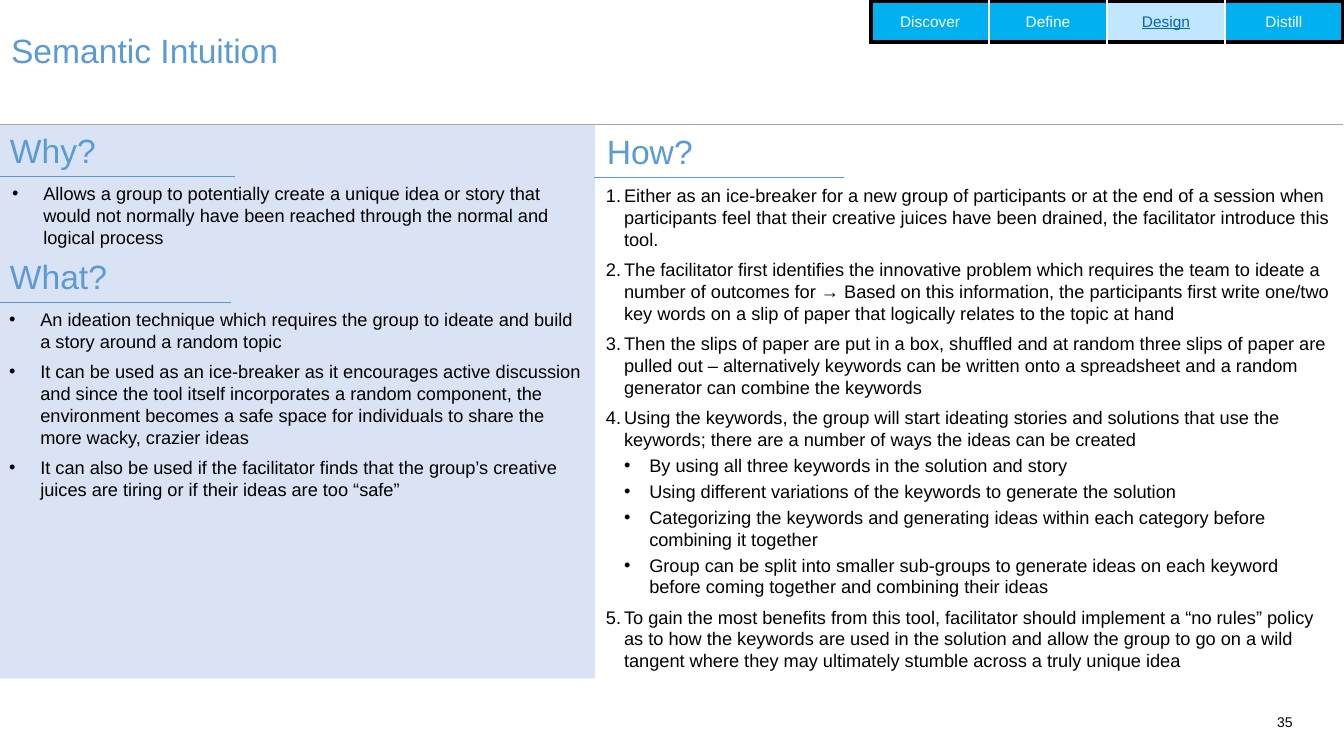
from dataclasses import dataclass

from lxml import etree
from pptx import Presentation
from pptx import util as u
from pptx.dml.color import RGBColor
from pptx.enum import shapes, text
from pptx.oxml import ns


@dataclass(frozen=True)
class Theme:
    """Colours, font and type sizes of the slide."""
    font: str = "Arial"
    accent: str = "5B9BD5"
    panel: str = "DAE3F3"
    rule: str = "A6A6A6"
    ink: str = "000000"
    white: str = "FFFFFF"
    tab: str = "00B0F0"
    tab_active: str = "C0E7FF"
    link: str = "0563C1"
    heading: float = 24
    body: float = 13
    tab_size: float = 11
    number: float = 10
    line_pitch: float = 15.6


T = Theme()
NUMBER, BULLET, SUB = "number", "bullet", "sub"
INDENTS = {NUMBER: (0.18, 0.18), BULLET: (0.31, 0.31), SUB: (0.43, 0.25)}

WHY = [
    (BULLET, "Allows a group to potentially create a unique idea or story that would not normally have been reached through the normal and logical process", 0),
]
WHAT = [
    (BULLET, "An ideation technique which requires the group to ideate and build a story around a random topic", 6),
    (BULLET, "It can be used as an ice-breaker as it encourages active discussion and since the tool itself incorporates a random component, the environment becomes a safe space for individuals to share the more wacky, crazier ideas", 6),
    (BULLET, "It can also be used if the facilitator finds that the group’s creative juices are tiring or if their ideas are too “safe”", 6),
]
HOW = [
    (NUMBER, "Either as an ice-breaker for a new group of participants or at the end of a session when participants feel that their creative juices have been drained, the facilitator introduce this tool.", 6),
    (NUMBER, "The facilitator first identifies the innovative problem which requires the team to ideate a number of outcomes for → Based on this information, the participants first write one/two key words on a slip of paper that logically relates to the topic at hand", 6),
    (NUMBER, "Then the slips of paper are put in a box, shuffled and at random three slips of paper are pulled out – alternatively keywords can be written onto a spreadsheet and a random generator can combine the keywords", 6),
    (NUMBER, "Using the keywords, the group will start ideating stories and solutions that use the keywords; there are a number of ways the ideas can be created", 3),
    (SUB, "By using all three keywords in the solution and story", 3),
    (SUB, "Using different variations of the keywords to generate the solution", 3),
    (SUB, "Categorizing the keywords and generating ideas within each category before combining it together", 3),
    (SUB, "Group can be split into smaller sub-groups to generate ideas on each keyword before coming together and combining their ideas", 6),
    (NUMBER, "To gain the most benefits from this tool, facilitator should implement a “no rules” policy as to how the keywords are used in the solution and allow the group to go on a wild tangent where they may ultimately stumble across a truly unique idea", 6),
]


def rgb(value):
    """Turn a hex string into a colour."""
    return RGBColor.from_string(value)


def add_run(p, words, size, color):
    """Add one formatted run to a paragraph."""
    r = p.add_run()
    r.text = words
    r.font.name, r.font.size, r.font.bold = T.font, u.Pt(size), False
    r.font.color.rgb = rgb(color)
    return r


def place(sp, box):
    """Move a shape to a box and prepare its text frame."""
    sp.left, sp.top, sp.width, sp.height = map(u.Inches, box)
    tf = sp.text_frame
    tf.word_wrap = True
    tf.auto_size = text.MSO_AUTO_SIZE.NONE
    tf.vertical_anchor = text.MSO_ANCHOR.TOP
    return tf


def fill_heading(sp, box, words):
    """Write a large accent heading into a shape."""
    p = place(sp, box).paragraphs[0]
    p.alignment = text.PP_ALIGN.LEFT
    add_run(p, words, T.heading, T.accent)


def add_rule(s, left, top, width, color):
    """Draw a thin horizontal line."""
    cx = s.shapes.add_connector(
        shapes.MSO_CONNECTOR.STRAIGHT, u.Inches(left), u.Inches(top),
        u.Inches(left + width), u.Inches(top))
    cx.line.color.rgb = rgb(color)
    cx.line.width = u.Pt(0.5)
    etree.SubElement(cx._element.spPr, ns.qn("a:effectLst"))


def set_bullet(p, kind):
    """Give a paragraph its indent and its number or bullet."""
    margin, hanging = INDENTS[kind]
    pPr = p._p.get_or_add_pPr()
    pPr.set("marL", str(u.Inches(margin)))
    pPr.set("indent", str(-u.Inches(hanging)))
    etree.SubElement(pPr, ns.qn("a:buFont"), typeface=T.font)
    if kind == NUMBER:
        etree.SubElement(pPr, ns.qn("a:buAutoNum"), type="arabicPeriod")
    else:
        etree.SubElement(pPr, ns.qn("a:buChar"), char="•")


def fill_list(sp, box, items):
    """Write a numbered or bulleted list into a body placeholder."""
    tf = place(sp, box)
    for i, (kind, words, after) in enumerate(items):
        p = tf.paragraphs[0] if i == 0 else tf.add_paragraph()
        p.level = 1 if kind == SUB else 0
        set_bullet(p, kind)
        p.alignment = text.PP_ALIGN.LEFT
        p.line_spacing = u.Pt(T.line_pitch)
        p.space_before, p.space_after = u.Pt(0), u.Pt(after)
        add_run(p, words, T.body, T.ink)


def add_section(s, sp, box, heading, rule, items, list_box):
    """Build a heading, its rule and its list relative to a box."""
    left, top, width = box
    fill_heading(s.shapes.add_textbox(0, 0, 0, 0), (left, top, 1.3, 0.51), heading)
    add_rule(s, rule[0], top + 0.51, rule[1], T.accent)
    dx, dy, height = list_box
    fill_list(sp, (left + dx, top + dy, width, height), items)


def add_panel(s, box):
    """Put the tinted panel behind the left column."""
    sp = s.shapes.add_shape(shapes.MSO_SHAPE.RECTANGLE, *map(u.Inches, box))
    sp.shadow.inherit = False
    sp.fill.solid()
    sp.fill.fore_color.rgb = rgb(T.panel)
    sp.line.fill.background()
    s.shapes._spTree.insert(2, sp._element)


def set_border(cell, side, color, width):
    """Draw one border of a cell."""
    ln = etree.SubElement(cell._tc.get_or_add_tcPr(), ns.qn("a:ln" + side), w=str(u.Pt(width)))
    fill = etree.SubElement(ln, ns.qn("a:solidFill"))
    etree.SubElement(fill, ns.qn("a:srgbClr"), val=color)


def add_phase_tabs(s, box, phases, active):
    """Build the row of phase tabs with the active one lit."""
    table = s.shapes.add_table(1, len(phases), *map(u.Inches, box)).table
    table.first_row = table.horz_banding = False
    outer, inner = (T.ink, 3), (T.white, 1)
    for i, phase in enumerate(phases):
        table.columns[i].width = u.Inches(box[2] / len(phases))
        cell = table.cell(0, i)
        set_border(cell, "L", *(outer if i == 0 else inner))
        set_border(cell, "R", *(outer if i == len(phases) - 1 else inner))
        set_border(cell, "T", *outer)
        set_border(cell, "B", *outer)
        on = phase == active
        cell.fill.solid()
        cell.fill.fore_color.rgb = rgb(T.tab_active if on else T.tab)
        cell.vertical_anchor = text.MSO_ANCHOR.MIDDLE
        p = cell.text_frame.paragraphs[0]
        p.alignment = text.PP_ALIGN.CENTER
        r = add_run(p, phase, T.tab_size, T.link if on else T.white)
        r.font.underline = on


def add_page_number(s, box, number):
    """Write the page number at the foot of the slide."""
    tf = place(s.shapes.add_textbox(0, 0, 0, 0), box)
    tf.margin_left = tf.margin_right = tf.margin_top = tf.margin_bottom = 0
    p = tf.paragraphs[0]
    p.alignment = text.PP_ALIGN.RIGHT
    add_run(p, number, T.number, T.ink)


def build_method_slide(prs):
    """Build the method slide with its why, what and how sections."""
    s = prs.slides.add_slide(prs.slide_layouts[4])
    why, what, spare, how = list(s.placeholders)[1:5]
    spare._element.getparent().remove(spare._element)
    for sp in list(s.placeholders):
        if sp.placeholder_format.idx >= 10:
            sp._element.getparent().remove(sp._element)
    add_panel(s, (0, 1.23, 5.9, 5.5))
    fill_heading(s.shapes.title, (0.01, 0.25, 8.16, 0.5), "Semantic Intuition")
    add_rule(s, -0.02, 1.23, 13.34, T.rule)
    add_section(s, why, (0, 1.24, 5.89), "Why?", (0, 2.33), WHY, (0.02, 0.52, 0.76))
    add_section(s, what, (0, 2.49, 5.89), "What?", (0, 2.29), WHAT, (-0.01, 0.52, 2.32))
    add_section(s, how, (5.92, 1.25, 7.41), "How?", (5.89, 2.48), HOW, (-0.01, 0.53, 4.98))
    add_phase_tabs(s, (8.64, 0.01, 4.68, 0.41), ["Discover", "Define", "Design", "Distill"], "Design")
    add_page_number(s, (12.48, 7.08, 0.34, 0.17), "35")


def main():
    """Create and save the presentation."""
    prs = Presentation()
    prs.slide_width, prs.slide_height = u.Inches(13.33), u.Inches(7.5)
    build_method_slide(prs)
    prs.save("out.pptx")


if __name__ == "__main__":
    main()
